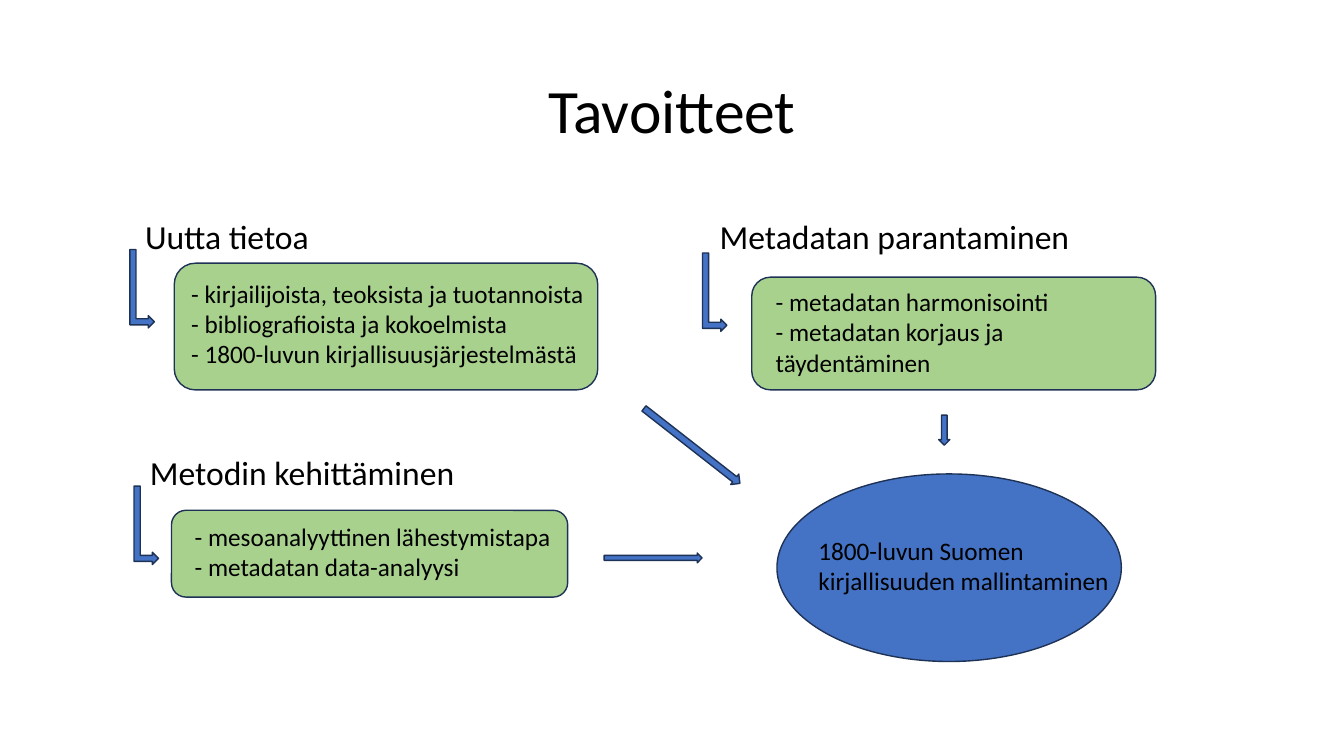
from pptx import Presentation
from pptx.dml.color import RGBColor
from pptx.enum.shapes import MSO_SHAPE as Preset
from pptx.enum.text import MSO_ANCHOR as Anchor, MSO_AUTO_SIZE as AutoSize, PP_ALIGN as Align
from pptx.util import Pt

BLACK = RGBColor(0x00, 0x00, 0x00)
WHITE = RGBColor(0xFF, 0xFF, 0xFF)
GREEN = RGBColor(0xA9, 0xD1, 0x8E)
BLUE = RGBColor(0x44, 0x72, 0xC4)
NAVY = RGBColor(0x1E, 0x32, 0x56)

# Each goal: heading, heading frame, panel frame, list frame, bent arrow corner, items
GOALS = [
    ("Uutta tietoa", (96.5, 151, 289.5, 36),
     (124.5, 188, 302.5, 90.5), (129.5, 195, 302.5, 72.5), (73.5, 197.5),
     ["- kirjailijoista, teoksista ja tuotannoista",
      "- bibliografioista ja kokoelmista",
      "- 1800-luvun kirjallisuusjärjestelmästä"]),
    ("Metodin kehittäminen", (100, 319.5, 304.5, 36),
     (122.5, 364.5, 283, 62), (132, 368.5, 273.5, 51), (76.5, 366.5),
     ["- mesoanalyyttinen lähestymistapa",
      "- metadatan data-analyysi"]),
    ("Metadatan parantaminen", (507, 151, 279.5, 36),
     (537, 198, 288.5, 80.5), (547, 201, 263.5, 72.5), (482.5, 200),
     ["- metadatan harmonisointi",
      "- metadatan korjaus ja täydentäminen"]),
]
BENT_ARROW_SIZE = (56, 17.5)

# Frame before rotation, then clockwise rotation
ARROWS_TO_RESULT = [
    ((489.5, 275, 9.5, 87), 128),
    ((463, 363.5, 7, 70), 90),
    ((670.5, 296.5, 8, 21.5), 180),
]


class SlideBuilder:
    font = "Calibri"

    def __init__(self, page):
        self.page = page
        background = page.background.fill
        background.solid()
        background.fore_color.rgb = WHITE

    def fill_text(self, frame, lines, size):
        frame.word_wrap = True
        frame.text = "\n".join(lines)
        for para in frame.paragraphs:
            for span in para.runs:
                span.font.name = self.font
                span.font.size = Pt(size)
                span.font.color.rgb = BLACK

    def title(self, text, place):
        box = self.page.shapes.title
        box.left, box.top, box.width, box.height = map(Pt, place)
        self.fill_text(box.text_frame, [text], 44)
        box.text_frame.vertical_anchor = Anchor.MIDDLE
        para = box.text_frame.paragraphs[0]
        para.alignment = Align.CENTER
        para.line_spacing = 0.9

    def text(self, lines, place, size=18):
        frame = self.page.shapes.add_textbox(*map(Pt, place)).text_frame
        self.fill_text(frame, lines, size)
        frame.auto_size = AutoSize.SHAPE_TO_FIT_TEXT

    def shape(self, preset, place, color, rotation=0):
        shape = self.page.shapes.add_shape(preset, *map(Pt, place))
        shape.rotation = rotation
        shape.shadow.inherit = False
        shape.fill.solid()
        shape.fill.fore_color.rgb = color
        shape.line.color.rgb = NAVY
        shape.line.width = Pt(1)


def main():
    deck = Presentation()
    deck.slide_width, deck.slide_height = Pt(960), Pt(540)
    slide = SlideBuilder(deck.slides.add_slide(deck.slide_layouts[5]))

    slide.title("Tavoitteet", (66, 29, 828, 104))
    for heading, heading_place, panel_place, list_place, corner, items in GOALS:
        slide.text([heading], heading_place, 24)
        slide.shape(Preset.ROUNDED_RECTANGLE, panel_place, GREEN)
        slide.text(items, list_place)
        slide.shape(Preset.BENT_UP_ARROW, corner + BENT_ARROW_SIZE, BLUE, 90)

    slide.shape(Preset.OVAL, (555, 338.5, 246, 134), BLUE)
    slide.text(["1800-luvun Suomen kirjallisuuden mallintaminen"], (577.5, 378.5, 229, 51))
    for place, rotation in ARROWS_TO_RESULT:
        slide.shape(Preset.UP_ARROW, place, BLUE, rotation)

    deck.save("out.pptx")


if __name__ == "__main__":
    main()
